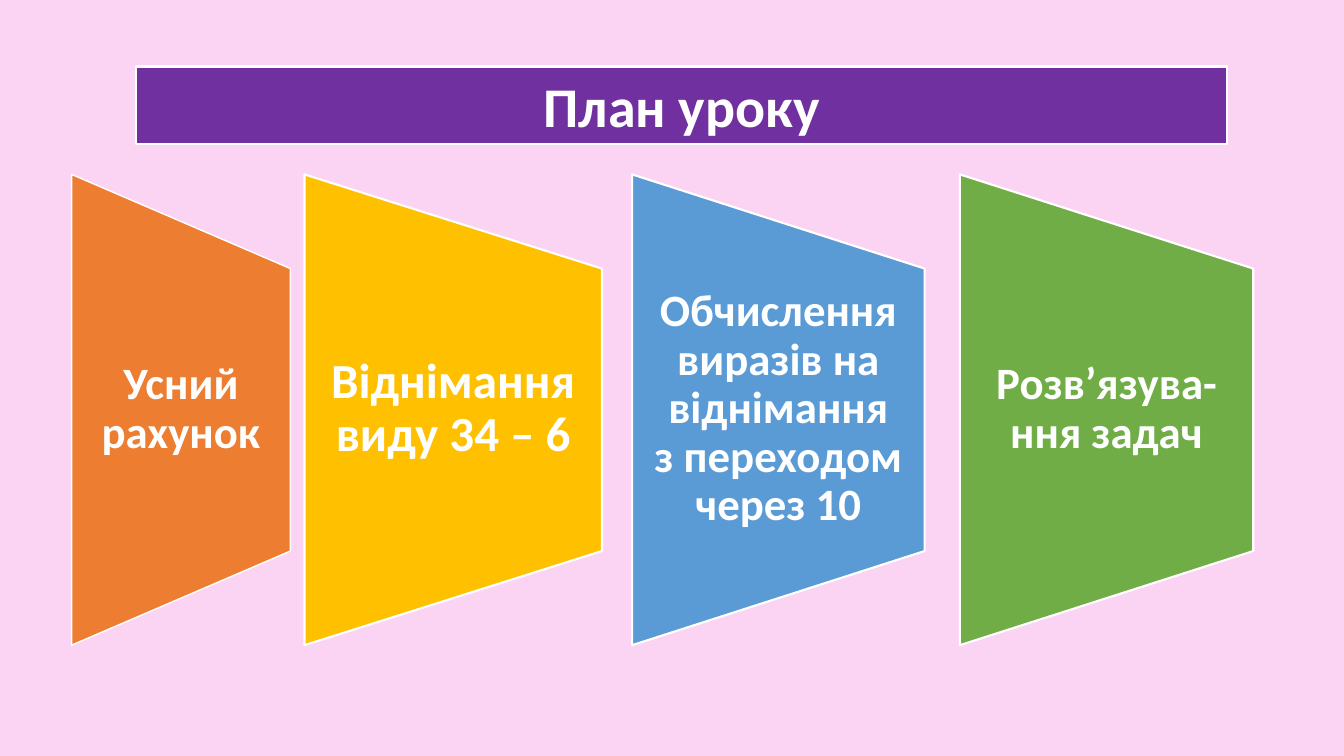
from pptx import Presentation
from pptx.dml.color import RGBColor
from pptx.enum.shapes import MSO_SHAPE as Shape
from pptx.enum.text import MSO_ANCHOR as Anchor, MSO_AUTO_SIZE as Fit, PP_ALIGN as Align
from pptx.util import Inches, Pt

WIDE, HIGH = Inches(13.33), Inches(7.5)
WHITE = "FFFFFF"
FIRST, NEXT, PITCH = 5.33, 22.66, 24.38
TOP, TALL = 23.07, 62.27
TEXT_TOP, TEXT_TALL = 35.47, 37.33
STEPS = [
    ("Усний рахунок", FIRST, 16.28, "ED7D31", 1, 32, 0.22),
    ("Віднімання виду 34 – 6", NEXT, 22.13, "FFC000", 1.5, 35, 0.24),
    ("Обчислення виразів на віднімання з переходом через 10",
     NEXT + PITCH, 21.76, "5B9BD5", 1.5, 32, 0.22),
    ("Розв’язува-ння задач", NEXT + 2 * PITCH, 21.83, "70AD47", 1.5, 32, 0.22),
]


def color(code):
    return RGBColor.from_string(code)


def across(share):
    return round(WIDE * share / 100)


def down(share):
    return round(HIGH * share / 100)


def paint(shape, fill, line):
    shape.shadow.inherit = False
    shape.fill.solid()
    shape.fill.fore_color.rgb = color(fill)
    shape.line.color.rgb = color(WHITE)
    shape.line.width = Pt(line)


def write(frame, text, size):
    frame.text = text
    frame.word_wrap = True
    frame.vertical_anchor = Anchor.MIDDLE
    para = frame.paragraphs[0]
    para.alignment = Align.CENTER
    font = para.runs[0].font
    font.name, font.size, font.bold = "Calibri", Pt(size), True
    font.color.rgb = color(WHITE)
    return para


def add_title(slide, text):
    bar = slide.shapes.add_shape(
        Shape.RECTANGLE, across(10.13), down(8.8), across(81.17), down(10.27))
    paint(bar, "7030A0", 1.5)
    write(bar.text_frame, text, 40)
    bar.text_frame.auto_size = Fit.SHAPE_TO_FIT_TEXT


def add_step(slide, text, left, width, fill, line, size, inset):
    x, y, w, h = across(left), down(TOP), across(width), down(TALL)
    panel = slide.shapes.add_shape(
        Shape.FLOWCHART_MANUAL_OPERATION, x + (w - h) // 2, y + (h - w) // 2, h, w)
    panel.rotation = 270
    paint(panel, fill, line)
    box = slide.shapes.add_textbox(x, down(TEXT_TOP), w, down(TEXT_TALL))
    frame = box.text_frame
    frame.margin_left = frame.margin_right = Inches(inset)
    frame.margin_top = frame.margin_bottom = 0
    write(frame, text, size).line_spacing = 0.9


def main():
    deck = Presentation()
    deck.slide_width, deck.slide_height = WIDE, HIGH
    slide = deck.slides.add_slide(deck.slide_layouts[6])
    back = slide.background.fill
    back.solid()
    back.fore_color.rgb = color("FCD4F3")
    add_title(slide, "План уроку")
    for step in STEPS:
        add_step(slide, *step)
    deck.save("out.pptx")


if __name__ == "__main__":
    main()
